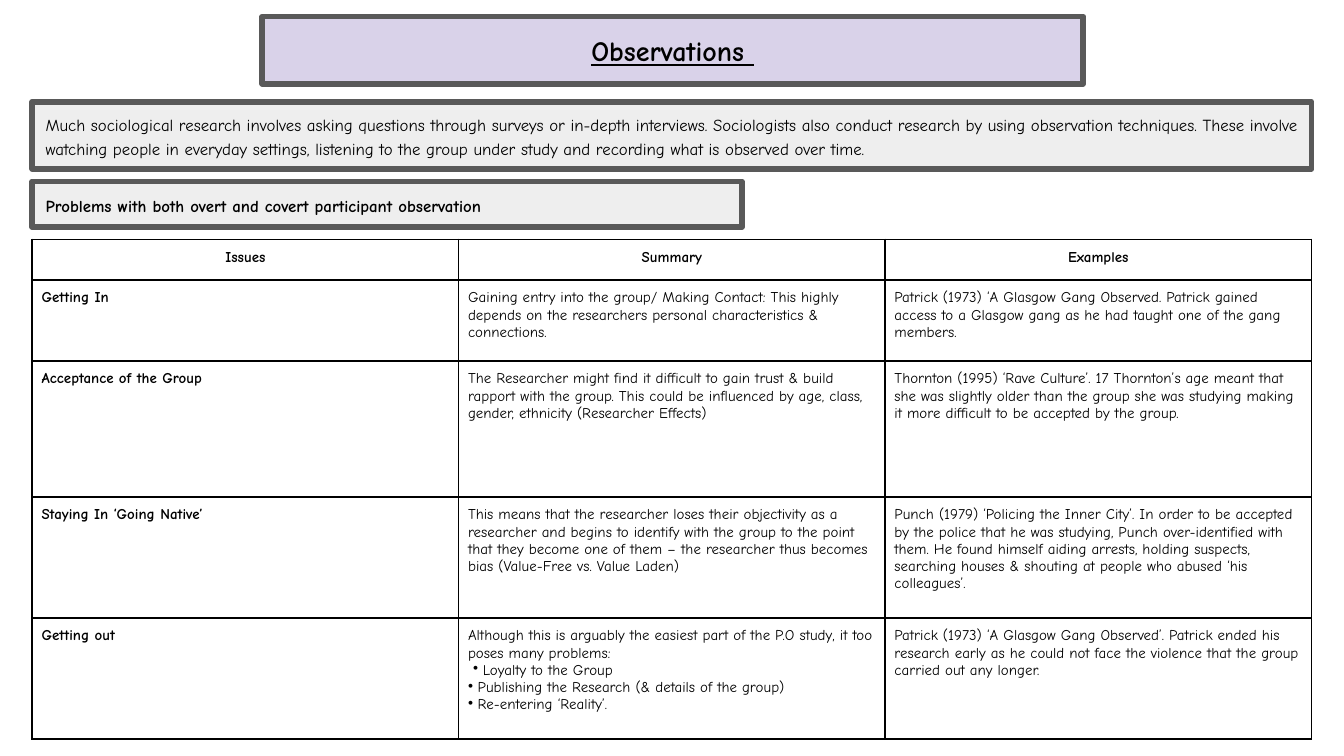
from pptx import Presentation
from pptx.dml.color import RGBColor
from pptx.enum import shapes, text
from pptx.oxml import ns, xmlchemy as xc
from pptx.util import Pt

HUES = {"ink": "000000", "edge": "595959", "lilac": "D9D2E9", "pale": "EEEEEE"}
FACE = "Comic Neue"
LEFT, WIDE = 17.3, 685.4
ROWS = [21.8, 43.4, 72.9, 64.8, 64.8]
MID = text.PP_ALIGN.CENTER
SIDES = ("left", "right", "top", "bottom")
GRID = [
    ["Issues", "Summary", "Examples"],
    ["Getting In",
     "Gaining entry into the group/ Making Contact: This highly depends on the "
     "researchers personal characteristics & connections.",
     "Patrick (1973) ‘A Glasgow Gang Observed. Patrick gained access to a Glasgow "
     "gang as he had taught one of the gang members."],
    ["Acceptance of the Group",
     "The Researcher might find it difficult to gain trust & build rapport with the "
     "group. This could be influenced by age, class, gender, ethnicity (Researcher Effects)",
     "Thornton (1995) ‘Rave Culture’. 17 Thornton’s age meant that she was slightly "
     "older than the group she was studying making it more difficult to be accepted "
     "by the group."],
    ["Staying In ‘Going Native’",
     "This means that the researcher loses their objectivity as a researcher and begins "
     "to identify with the group to the point that they become one of them – the "
     "researcher thus becomes bias (Value-Free vs. Value Laden)",
     "Punch (1979) ‘Policing the Inner City’. In order to be accepted by the police that "
     "he was studying, Punch over-identified with them. He found himself aiding arrests, "
     "holding suspects, searching houses & shouting at people who abused ‘his colleagues’."],
    ["Getting out",
     "Although this is arguably the easiest part of the P.O study, it too poses many problems:",
     "Patrick (1973) ‘A Glasgow Gang Observed’. Patrick ended his research early as he "
     "could not face the violence that the group carried out any longer."],
]
LIST = [("Loyalty to the Group", 7.9),
        ("Publishing the Research (& details of the group)", 5.2),
        ("Re-entering ‘Reality’.", 5.2)]


def tint(name):
    return RGBColor.from_string(HUES[name])


def apply(item, form):
    for key, val in form.items():
        setattr(item, key, val)


def write(para, words, size, form=None, **font):
    apply(para, form or {})
    run = para.add_run()
    run.text = words
    apply(run.font, {"name": FACE, "size": Pt(size), **font})
    run.font.color.rgb = tint("ink")


def frame(box, area, fill):
    apply(box, dict(zip(("left", "top", "width", "height"), map(Pt, area))))
    box.shadow.inherit = False
    box.fill.solid()
    box.fill.fore_color.rgb = tint(fill)
    box.line.color.rgb = tint("edge")
    box.line.width = Pt(3)
    apply(box.text_frame, {
        "word_wrap": True,
        "auto_size": text.MSO_AUTO_SIZE.NONE,
        "vertical_anchor": text.MSO_ANCHOR.MIDDLE,
        **{"margin_" + side: Pt(7.2) for side in SIDES},
    })
    return box.text_frame.paragraphs[0]


def add_note(slide, area, words, bold):
    box = slide.shapes.add_shape(shapes.MSO_SHAPE.RECTANGLE, 0, 0, 0, 0)
    form = {"alignment": text.PP_ALIGN.LEFT, "line_spacing": 1.15, "space_after": Pt(8)}
    write(frame(box, area, "pale"), words, 9, form, bold=bold)


def add_edges(cell):
    props = cell._tc.get_or_add_tcPr()
    for tag in ("a:lnL", "a:lnR", "a:lnT", "a:lnB"):
        line = xc.OxmlElement(tag)
        line.set("w", str(Pt(1)))
        fill = xc.OxmlElement("a:solidFill")
        hue = xc.OxmlElement("a:srgbClr")
        hue.set("val", HUES["ink"])
        fill.append(hue)
        line.append(fill)
        props.append(line)


def add_point(body, words, inset):
    para = body.add_paragraph()
    write(para, words, 8, bold=False)
    props = para._p.get_or_add_pPr()
    props.set("marL", str(Pt(inset)))
    props.set("indent", str(Pt(-5.2)))
    mark = xc.OxmlElement("a:buChar")
    mark.set("char", "•")
    props.append(mark)


def add_grid(slide):
    shape = slide.shapes.add_table(len(GRID), len(GRID[0]), Pt(LEFT), Pt(128.2),
                                   Pt(WIDE), Pt(sum(ROWS)))
    table = shape.table
    apply(table, {"first_row": False, "horz_banding": False})
    for row, tall in zip(table.rows, ROWS):
        row.height = Pt(tall)
    for r, line in enumerate(GRID):
        for c, words in enumerate(line):
            cell = table.cell(r, c)
            apply(cell, {"margin_" + side: Pt(5) for side in SIDES})
            add_edges(cell)
            cell.fill.background()
            form = {"alignment": MID} if r == 0 else {}
            write(cell.text_frame.paragraphs[0], words, 8, form, bold=r == 0 or c == 0)
    for words, inset in LIST:
        add_point(table.cell(len(GRID) - 1, 1).text_frame, words, inset)


def main():
    deck = Presentation()
    apply(deck, {"slide_width": Pt(720), "slide_height": Pt(405)})
    slide = deck.slides.add_slide(deck.slide_layouts[5])
    head = frame(slide.shapes.title, (140.5, 8.9, 439.8, 36), "lilac")
    write(head, "Observations ", 15, {"alignment": MID}, bold=True, underline=True)
    add_note(slide, (LEFT, 54.5, WIDE, 36),
             "Much sociological research involves asking questions through surveys or "
             "in-depth interviews. Sociologists also conduct research by using observation "
             "techniques. These involve watching people in everyday settings, listening to "
             "the group under study and recording what is observed over time.", False)
    add_note(slide, (LEFT, 97.2, 380.2, 24.5),
             "Problems with both overt and covert participant observation", True)
    add_grid(slide)
    deck.save("out.pptx")


if __name__ == "__main__":
    main()
